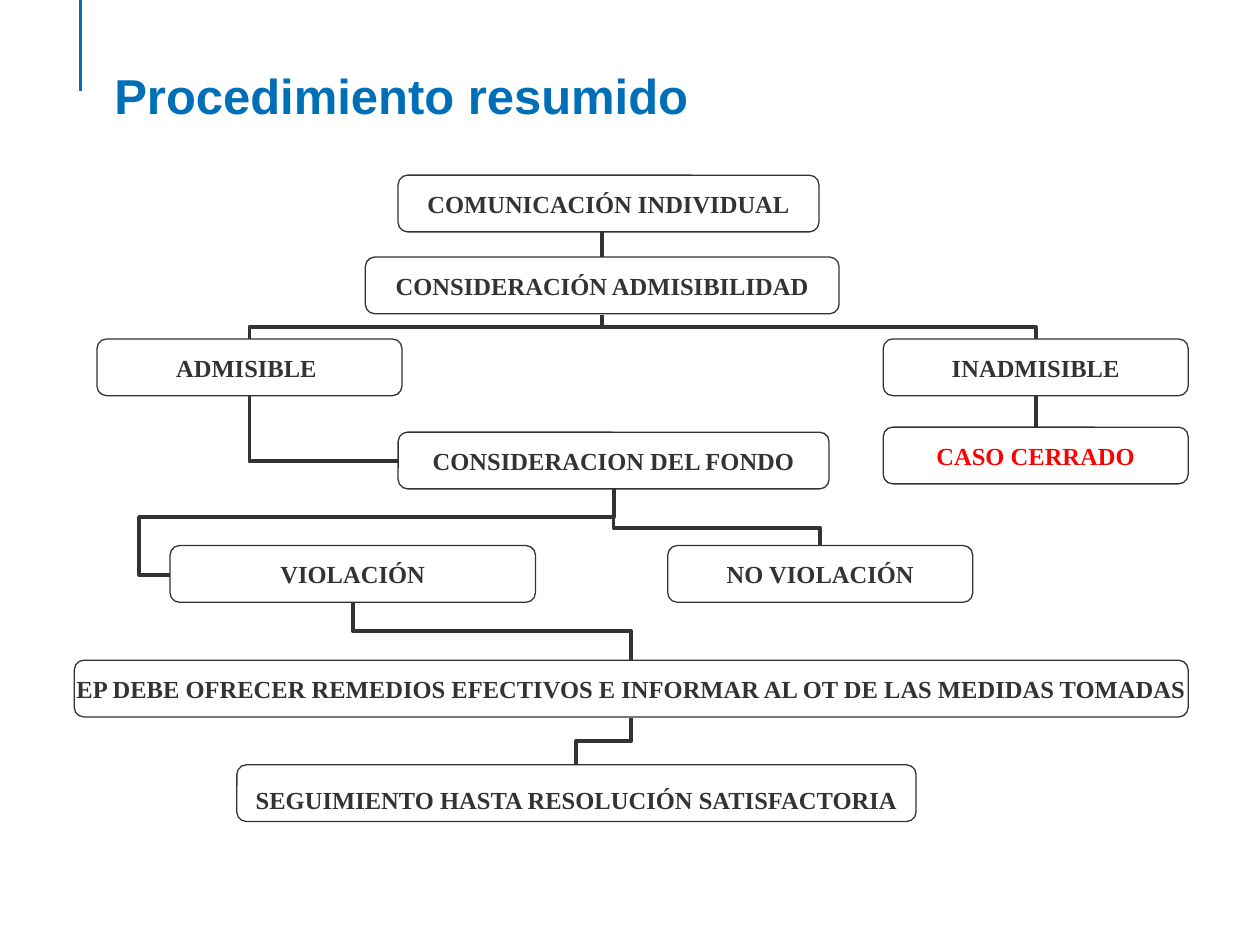
from lxml.etree import SubElement
from pptx import Presentation
from pptx.dml.color import RGBColor
from pptx.enum.shapes import MSO_CONNECTOR as Connector, MSO_SHAPE as Shape
from pptx.enum.text import MSO_ANCHOR as Anchor, PP_ALIGN as Align
from pptx.oxml.ns import qn
from pptx.util import Inches, Pt

COLORS = {"blue": "006FB7", "dark": "333333", "red": "FF0000", "white": "FFFFFF"}
BOX_HEIGHT = 0.45


def add_line(kind, start, end, color="dark", width=2.25):
    line = slide.shapes.add_connector(kind, *[Inches(value) for value in start + end])
    line.line.color.rgb = RGBColor.from_string(COLORS[color])
    line.line.width = Pt(width)
    SubElement(line._element.spPr, qn("a:effectLst"))
    return line


def shape_elbow(line, preset, rotation, flip=False, adjustments=()):
    properties = line._element.spPr
    frame = properties.find(qn("a:xfrm"))
    for name in ("flipH", "flipV"):
        frame.attrib.pop(name, None)
    frame.set("rot", str(rotation * 60000))
    if flip:
        frame.set("flipH", "1")
    geometry = properties.find(qn("a:prstGeom"))
    geometry.set("prst", preset)
    guides = geometry.find(qn("a:avLst"))
    for number, value in enumerate(adjustments, 1):
        SubElement(guides, qn("a:gd"), name=f"adj{number}", fmla=f"val {round(value * 100000)}")


presentation = Presentation()
presentation.slide_width = Inches(10)
presentation.slide_height = Inches(7.5)
slide = presentation.slides.add_slide(presentation.slide_layouts[6])

add_line(Connector.STRAIGHT, (0.64, 0), (0.64, 0.72), "blue", 2)

title = slide.shapes.add_textbox(Inches(0.81), Inches(0.47), Inches(8.27), Inches(1.02))
title.text_frame.word_wrap = True
run = title.text_frame.paragraphs[0].add_run()
run.text = "Procedimiento resumido"
run.font.name = "Arial"
run.font.size = Pt(28)
run.font.bold = True
run.font.color.rgb = RGBColor.from_string(COLORS["blue"])

vertical_elbows = [
    ((5.01, 5.7), (4.57, 6.07), 0.5),
    ((2.8, 4.78), (5.01, 5.24), 0.5),
    ((4.87, 3.88), (6.51, 4.33), 0.69),
    ((4.78, 2.5), (8.22, 2.69), 0.5),
    ((4.78, 2.5), (1.98, 2.69), 0.5),
]
for start, end, bend in vertical_elbows:
    run_across, drop = abs(end[0] - start[0]), end[1] - start[1]
    elbow = add_line(Connector.ELBOW, start, end)
    elbow.left = Inches((start[0] + end[0] - drop) / 2)
    elbow.top = Inches((start[1] + end[1] - run_across) / 2)
    elbow.width, elbow.height = Inches(drop), Inches(run_across)
    rightward = end[0] > start[0]
    shape_elbow(elbow, "bentConnector3", 270 if rightward else 90, rightward, [bend])

violation_elbow = add_line(Connector.ELBOW, (1.35, 3.88), (4.87, 4.56))
shape_elbow(violation_elbow, "bentConnector4", 180, True, [-0.07, 0.67])
merits_elbow = add_line(Connector.ELBOW, (1.98, 3.14), (3.16, 3.66))
shape_elbow(merits_elbow, "bentConnector2", 180)

for x, top, bottom in [(8.22, 3.14, 3.39), (4.78, 1.74, 2.04)]:
    add_line(Connector.STRAIGHT, (x, top), (x, bottom))

boxes = [
    ("COMUNICACIÓN INDIVIDUAL", 3.16, 1.39, 3.34, "dark", 0),
    ("CONSIDERACIÓN ADMISIBILIDAD", 2.9, 2.04, 3.76, "dark", 0),
    ("ADMISIBLE ", 0.77, 2.69, 2.42, "dark", 0),
    ("INADMISIBLE", 7.01, 2.69, 2.42, "dark", 0),
    ("CASO CERRADO", 7.01, 3.39, 2.42, "red", 0),
    ("CONSIDERACION DEL FONDO", 3.16, 3.43, 3.42, "dark", 0),
    ("NO VIOLACIÓN", 5.3, 4.33, 2.42, "dark", 0),
    ("VIOLACIÓN", 1.35, 4.33, 2.9, "dark", 0),
    ("EP DEBE OFRECER REMEDIOS EFECTIVOS E INFORMAR AL OT DE LAS MEDIDAS TOMADAS",
     0.59, 5.24, 8.84, "dark", 0),
    ("SEGUIMIENTO HASTA RESOLUCIÓN SATISFACTORIA", 1.88, 6.07, 5.39, "dark", 0.1),
]
for text, left, top, width, color, top_margin in boxes:
    box = slide.shapes.add_shape(
        Shape.ROUNDED_RECTANGLE, Inches(left), Inches(top), Inches(width), Inches(BOX_HEIGHT))
    box.shadow.inherit = False
    box.fill.solid()
    box.fill.fore_color.rgb = RGBColor.from_string(COLORS["white"])
    box.line.color.rgb = RGBColor.from_string(COLORS["dark"])
    box.line.width = Pt(0.75)
    frame = box.text_frame
    frame.margin_left = frame.margin_right = frame.margin_bottom = 0
    frame.margin_top = Inches(top_margin)
    frame.vertical_anchor = Anchor.MIDDLE
    frame.word_wrap = False
    paragraph = frame.paragraphs[0]
    paragraph.alignment = Align.CENTER
    run = paragraph.add_run()
    run.text = text
    run.font.name = "Times New Roman"
    run.font.size = Pt(14)
    run.font.bold = True
    run.font.color.rgb = RGBColor.from_string(COLORS[color])

presentation.save("out.pptx")
